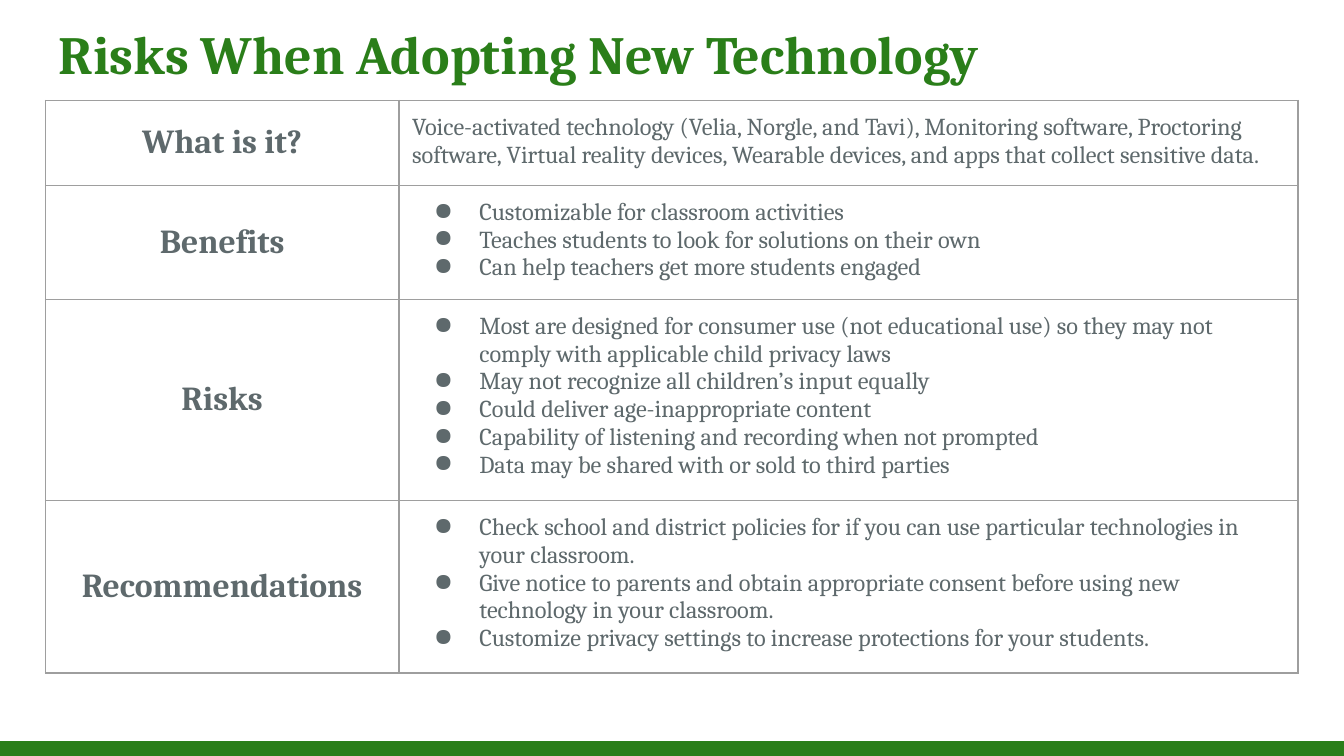
"""Build a slide with a table of the risks of adopting new classroom technology."""
from dataclasses import dataclass

import lxml.etree
import pptx
import pptx.dml.color
import pptx.enum.shapes
import pptx.enum.text
import pptx.oxml.ns
import pptx.util

Cm = pptx.util.Cm
GREEN = pptx.dml.color.RGBColor(0x2A, 0x7E, 0x19)
SLATE = pptx.dml.color.RGBColor(0x5E, 0x69, 0x6C)
GREY = pptx.dml.color.RGBColor(0x9E, 0x9E, 0x9E)
LEFT, WIDTH = Cm(0.86), Cm(23.67)
COLUMN_WIDTHS = (Cm(6.68), Cm(16.99))
INSET = Cm(0.25)
MARGINS = {f"margin_{side}": INSET for side in ("left", "right", "top", "bottom")}
MIDDLE = pptx.enum.text.MSO_ANCHOR.MIDDLE
TOP = pptx.enum.text.MSO_ANCHOR.TOP
CENTER = pptx.enum.text.PP_ALIGN.CENTER
START = pptx.enum.text.PP_ALIGN.LEFT


@dataclass(frozen=True)
class Style:
    size: float
    bold: bool
    color: pptx.dml.color.RGBColor
    alignment: pptx.enum.text.PP_ALIGN = START


@dataclass(frozen=True)
class Topic:
    heading: str
    height: float
    lines: tuple[str, ...]
    bulleted: bool = True


TITLE = Style(28.8, True, GREEN)
HEADING = Style(18, True, SLATE, CENTER)
BODY = Style(13, False, SLATE)
TOPICS = (
    Topic("What is it?", 1.54, (
        "Voice-activated technology (Velia, Norgle, and Tavi), Monitoring software, "
        "Proctoring software, Virtual reality devices, Wearable devices, and apps that "
        "collect sensitive data.",
    ), bulleted=False),
    Topic("Benefits", 2.07, (
        "Customizable for classroom activities",
        "Teaches students to look for solutions on their own",
        "Can help teachers get more students engaged",
    )),
    Topic("Risks", 3.66, (
        "Most are designed for consumer use (not educational use) so they may not comply "
        "with applicable child privacy laws",
        "May not recognize all children’s input equally",
        "Could deliver age-inappropriate content",
        "Capability of listening and recording when not prompted",
        "Data may be shared with or sold to third parties",
    )),
    Topic("Recommendations", 3.13, (
        "Check school and district policies for if you can use particular technologies in "
        "your classroom.",
        "Give notice to parents and obtain appropriate consent before using new technology "
        "in your classroom.",
        "Customize privacy settings to increase protections for your students.",
    )),
)


def apply(target: object, values: dict) -> None:
    for name, value in values.items():
        setattr(target, name, value)


def add_element(parent, tag: str, **attributes: str):
    return lxml.etree.SubElement(parent, pptx.oxml.ns.qn(tag), attributes)


def add_color(parent, color: pptx.dml.color.RGBColor) -> None:
    add_element(parent, "a:srgbClr", val=str(color))


def add_bullet(paragraph) -> None:
    properties = paragraph._p.get_or_add_pPr()
    properties.set("marL", str(Cm(1.27)))
    properties.set("indent", str(-Cm(0.86)))
    add_color(add_element(properties, "a:buClr"), SLATE)
    add_element(properties, "a:buChar", char="●")


def write(frame, lines: tuple[str, ...], style: Style, bulleted: bool = False) -> None:
    for index, line in enumerate(lines):
        paragraph = frame.add_paragraph() if index else frame.paragraphs[0]
        paragraph.alignment = style.alignment
        if bulleted:
            add_bullet(paragraph)
        span = paragraph.add_run()
        span.text = line
        apply(span.font, {"name": "Cambria", "size": pptx.util.Pt(style.size),
                          "bold": style.bold})
        span.font.color.rgb = style.color


def format_cell(cell, anchor: pptx.enum.text.MSO_ANCHOR) -> None:
    apply(cell, {**MARGINS, "vertical_anchor": anchor})
    properties = cell._tc.get_or_add_tcPr()
    for side in "LRTB":
        border = add_element(properties, f"a:ln{side}", w=str(pptx.util.Pt(0.75)))
        add_color(add_element(border, "a:solidFill"), GREY)
    cell.fill.background()


def add_title(page, text: str) -> None:
    box = page.shapes.add_textbox(LEFT, Cm(0.15), WIDTH, Cm(1.73))
    apply(box.text_frame, {**MARGINS, "word_wrap": True, "vertical_anchor": TOP})
    write(box.text_frame, (text,), TITLE)


def add_topics(page, topics: tuple[Topic, ...]) -> None:
    height = Cm(sum(topic.height for topic in topics))
    table = page.shapes.add_table(len(topics), 2, LEFT, Cm(1.9), WIDTH, height).table
    apply(table, {"first_row": False, "horz_banding": False})
    for column, width in zip(table.columns, COLUMN_WIDTHS):
        column.width = width
    for row, topic in zip(table.rows, topics):
        row.height = Cm(topic.height)
        heading, body = row.cells
        format_cell(heading, MIDDLE)
        format_cell(body, TOP)
        write(heading.text_frame, (topic.heading,), HEADING)
        write(body.text_frame, topic.lines, BODY, topic.bulleted)


def add_footer(page) -> None:
    bar = page.shapes.add_shape(pptx.enum.shapes.MSO_SHAPE.RECTANGLE,
                                0, Cm(14.01), Cm(25.4), Cm(0.28))
    bar.shadow.inherit = False
    bar.fill.solid()
    bar.fill.fore_color.rgb = GREEN
    bar.line.fill.background()


def main() -> None:
    deck = pptx.Presentation()
    apply(deck, {"slide_width": Cm(25.4), "slide_height": Cm(14.29)})
    page = deck.slides.add_slide(deck.slide_layouts[6])
    add_footer(page)
    add_title(page, "Risks When Adopting New Technology")
    add_topics(page, TOPICS)
    deck.save("out.pptx")


if __name__ == "__main__":
    main()
